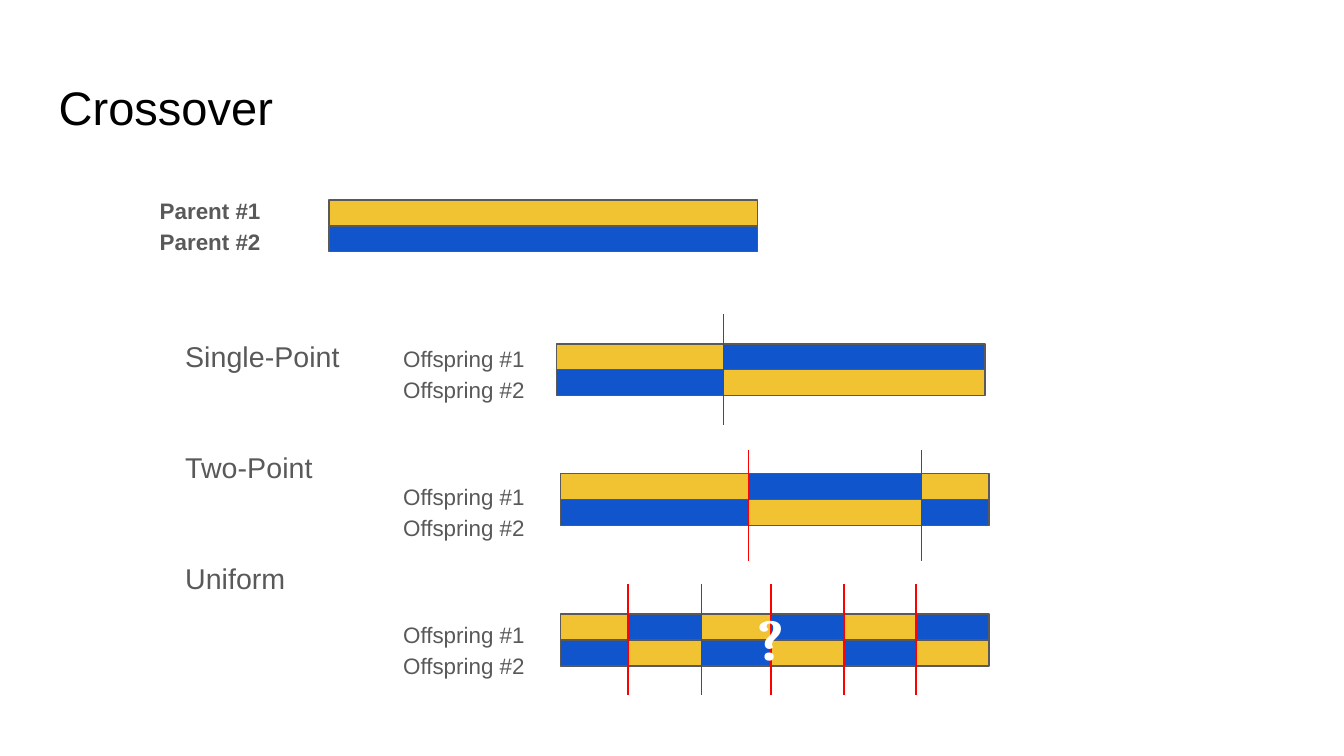
"""Build a slide comparing single-point, two-point and uniform crossover."""
from dataclasses import dataclass
from itertools import pairwise

from lxml import etree
from pptx import Presentation
from pptx.dml.color import RGBColor
from pptx.enum.shapes import MSO_CONNECTOR, MSO_SHAPE
from pptx.oxml.ns import qn
from pptx.slide import Slide
from pptx.util import Cm, Pt

RECTANGLE = MSO_SHAPE.RECTANGLE
STRAIGHT = MSO_CONNECTOR.STRAIGHT

COLOURS = {
    "gold": "F1C232",
    "blue": "1155CC",
    "grey": "595959",
    "red": "FF0000",
    "black": "000000",
    "white": "FFFFFF",
}
BAR_WIDTH = 8.1
BAR_HEIGHT = 0.49
MARKER_HEIGHT = 2.1
LINE_WIDTH = 0.75
INSET = 0.25


@dataclass(frozen=True)
class Chromosomes:
    """A pair of stacked bars whose colours swap at each cut."""

    left: float
    top: float
    cuts: tuple[float, ...] = ()
    marker_top: float = 0


@dataclass(frozen=True)
class Label:
    """A text box with one or more paragraphs, each a tuple of lines."""

    left: float
    top: float
    width: float
    height: float
    paragraphs: tuple[tuple[str, ...], ...]
    size: float
    colour: str = "grey"
    font: str = "Arial"
    bold: bool = False
    line_spacing: float = 1.0
    gap: float = 0


OFFSPRING = ("Offspring #1", "Offspring #2")

PAIRS = (
    Chromosomes(6.22, 3.78),
    Chromosomes(10.52, 6.5, (13.67,), 5.94),
    Chromosomes(10.59, 8.95, (14.15, 17.42), 8.51),
    Chromosomes(10.59, 11.61, (11.87, 13.26, 14.57, 15.95, 17.31), 11.04),
)

LABELS = (
    Label(0.86, 1.24, 23.67, 1.6, (("Crossover",),), 25.2, "black"),
    Label(3.25, 6.2, 3.68, 6.35, (("Single-Point",), ("Two-Point",), ("Uniform",)),
          15.3, line_spacing=0.95, gap=42.2),
    Label(7.37, 6.2, 5.33, 6.99, (OFFSPRING,) * 3, 12, line_spacing=1.15, gap=40.7),
    Label(2.77, 3.4, 7.14, 1.73, (("Parent #1", "Parent #2"),), 12,
          bold=True, line_spacing=1.15),
    Label(14.07, 11.15, 1.5, 1.83, (("?",),), 31, "white", "Cambria", True),
)


def colour_of(name: str) -> RGBColor:
    """Return the named colour."""
    return RGBColor.from_string(COLOURS[name])


def draw_bar(slide: Slide, left: float, top: float, width: float, colour: str) -> None:
    """Draw one coloured stretch of a chromosome."""
    shape = slide.shapes.add_shape(RECTANGLE, Cm(left), Cm(top), Cm(width), Cm(BAR_HEIGHT))
    shape.shadow.inherit = False
    shape.fill.solid()
    shape.fill.fore_color.rgb = colour_of(colour)
    shape.line.color.rgb = colour_of("grey")
    shape.line.width = Pt(LINE_WIDTH)


def draw_marker(slide: Slide, left: float, top: float) -> None:
    """Draw the vertical line of a crossover point."""
    connector = slide.shapes.add_connector(
        STRAIGHT, Cm(left), Cm(top), Cm(left), Cm(top + MARKER_HEIGHT))
    connector.line.color.rgb = colour_of("red")
    connector.line.width = Pt(LINE_WIDTH)
    etree.SubElement(connector.element.spPr, qn("a:effectLst"))


def draw_chromosomes(slide: Slide, pair: Chromosomes) -> None:
    """Draw both bars of a pair and their crossover points."""
    edges = (pair.left, *pair.cuts, pair.left + BAR_WIDTH)
    for row in range(2):
        for index, (start, end) in enumerate(pairwise(edges)):
            colour = ("gold", "blue")[(row + index) % 2]
            draw_bar(slide, start, pair.top + row * BAR_HEIGHT, end - start, colour)
    for cut in pair.cuts:
        draw_marker(slide, cut, pair.marker_top)


def draw_label(slide: Slide, label: Label) -> None:
    """Draw a text box run by run."""
    box = slide.shapes.add_textbox(
        Cm(label.left), Cm(label.top), Cm(label.width), Cm(label.height))
    frame = box.text_frame
    frame.word_wrap = True
    frame.margin_left = frame.margin_right = Cm(INSET)
    frame.margin_top = frame.margin_bottom = Cm(INSET)
    for index, lines in enumerate(label.paragraphs):
        paragraph = frame.add_paragraph() if index else frame.paragraphs[0]
        paragraph.line_spacing = label.line_spacing
        paragraph.space_before = Pt(label.gap if index else 0)
        for number, line in enumerate(lines):
            if number:
                paragraph.add_line_break()
            run = paragraph.add_run()
            run.text = line
            run.font.name = label.font
            run.font.size = Pt(label.size)
            run.font.bold = label.bold
            run.font.color.rgb = colour_of(label.colour)


def main() -> None:
    """Assemble and save the presentation."""
    presentation = Presentation()
    presentation.slide_width = Cm(25.4)
    presentation.slide_height = Cm(14.29)
    slide = presentation.slides.add_slide(presentation.slide_layouts[6])
    for pair in PAIRS:
        draw_chromosomes(slide, pair)
    for label in LABELS:
        draw_label(slide, label)
    presentation.save("out.pptx")


if __name__ == "__main__":
    main()
